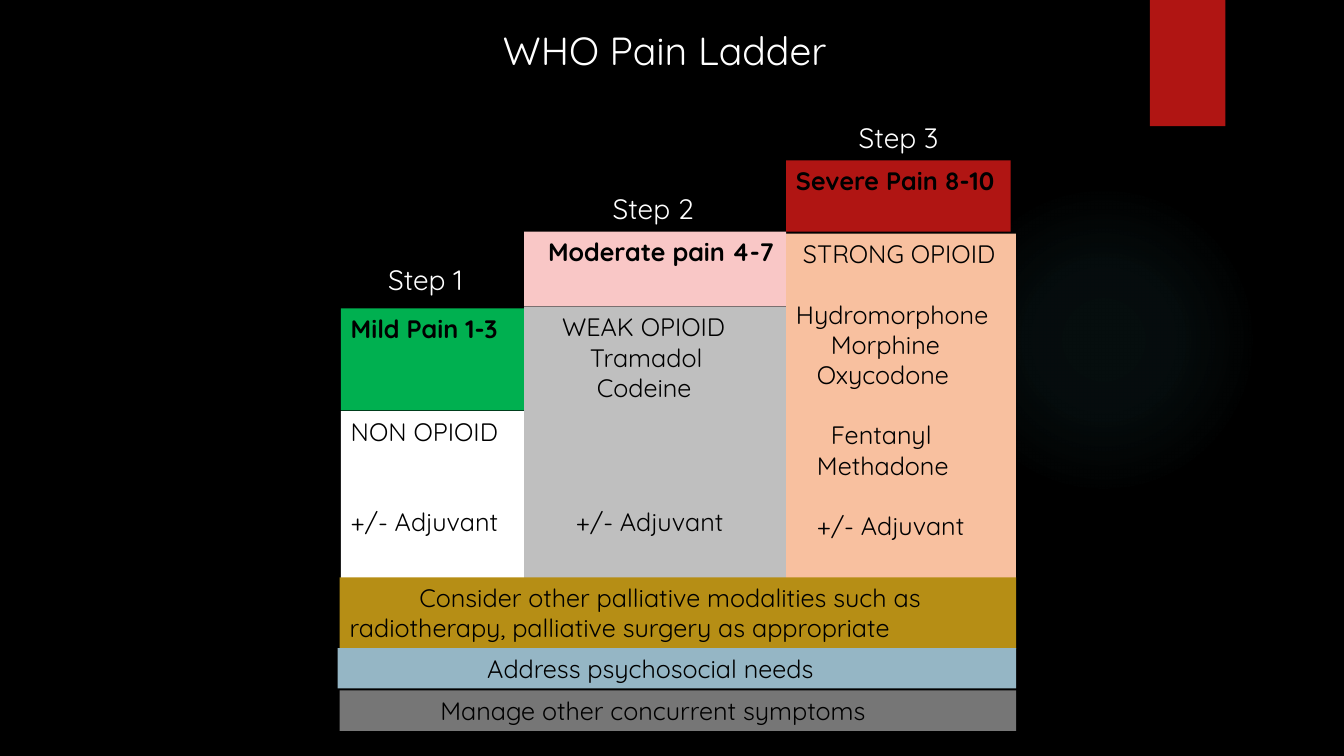
from dataclasses import dataclass

import lxml.etree
import pptx
import pptx.dml.color
import pptx.enum.shapes
import pptx.enum.text
import pptx.oxml.ns
import pptx.util

Cm = pptx.util.Cm
Pt = pptx.util.Pt
FONT = "Quicksand"
BLACK = "000000"
WHITE = "FFFFFF"
RED = "B01513"
INDENT_UNIT = 0.176


@dataclass(frozen=True)
class Line:
    text: str
    indent: int = 0
    space_before: float = 0


@dataclass(frozen=True)
class Panel:
    left: float
    top: float
    width: float
    height: float
    fill: str
    lines: tuple[Line, ...] = ()
    bold: bool = False


@dataclass(frozen=True)
class StepLabel:
    text: str
    left: float
    top: float


PANELS = (
    Panel(28.98, 0, 1.9, 3.18, RED),
    Panel(13.21, 5.84, 6.6, 1.88, "F9C7C6", (Line("Moderate pain 4-7", 2),), True),
    Panel(8.59, 7.77, 4.62, 2.57, "00B050", (Line("Mild Pain 1-3"),), True),
    Panel(19.81, 4.04, 5.66, 1.8, RED, (Line("Severe Pain 8-10"),), True),
    Panel(8.59, 10.36, 4.62, 6.4, WHITE, (
        Line("NON OPIOID"),
        Line("+/- Adjuvant", space_before=43),
    )),
    Panel(13.21, 7.73, 6.6, 8.28, "BFBFBF", (
        Line("WEAK OPIOID", 4),
        Line("Tramadol", 8),
        Line("Codeine", 9),
        Line("+/- Adjuvant", 6, 74),
    )),
    Panel(19.81, 5.89, 5.79, 9.5, "F8C09F", (
        Line("STRONG OPIOID", 1),
        Line("Hydromorphone", 0, 21.5),
        Line("Morphine", 5),
        Line("Oxycodone", 3),
        Line("Fentanyl", 5, 21.5),
        Line("Methadone", 3),
        Line("+/- Adjuvant", 3, 21.5),
    )),
    Panel(8.56, 14.55, 17.05, 1.8, "B68E15", (
        Line("Consider other palliative modalities such as "
             "radiotherapy, palliative surgery as appropriate", 10),
    )),
    Panel(8.51, 16.33, 17.1, 1.02, "95B6C5", (Line("Address psychosocial needs", 20),)),
    Panel(8.56, 17.4, 17.05, 1.02, "767676", (Line("Manage other concurrent symptoms", 13),)),
)

STEP_LABELS = (
    StepLabel("Step 1", 9.53, 6.5),
    StepLabel("Step 2", 15.19, 4.7),
    StepLabel("Step 3", 21.39, 2.92),
)


def rgb(value: str) -> pptx.dml.color.RGBColor:
    return pptx.dml.color.RGBColor.from_string(value)


def write_lines(shape, lines: tuple[Line, ...], size: float, color: str, bold: bool = False) -> None:
    frame = shape.text_frame
    frame.word_wrap = True
    frame.auto_size = pptx.enum.text.MSO_AUTO_SIZE.NONE
    frame.vertical_anchor = pptx.enum.text.MSO_ANCHOR.TOP
    for index, line in enumerate(lines):
        paragraph = frame.add_paragraph() if index else frame.paragraphs[0]
        paragraph.text = line.text
        paragraph.alignment = pptx.enum.text.PP_ALIGN.LEFT
        properties = paragraph._p.get_or_add_pPr()
        properties.set("marL", "0")
        properties.set("indent", str(int(Cm(line.indent * INDENT_UNIT))))
        if line.space_before:
            paragraph.space_before = Pt(line.space_before)
        paragraph.font.name = FONT
        paragraph.font.size = Pt(size)
        paragraph.font.bold = bold
        paragraph.font.color.rgb = rgb(color)


def add_glow(slide) -> None:
    glow = slide.shapes.add_shape(
        pptx.enum.shapes.MSO_SHAPE.OVAL, Cm(23.9), Cm(4.65), Cm(7.82), Cm(7.82))
    glow.shadow.inherit = False
    glow.line.fill.background()
    glow.fill.gradient()
    gradient = glow._element.spPr.find(pptx.oxml.ns.qn("a:gradFill"))
    for child in list(gradient):
        gradient.remove(child)

    def add(parent, tag: str, **attributes: str):
        return lxml.etree.SubElement(parent, pptx.oxml.ns.qn(tag), attributes)

    stops = add(gradient, "a:gsLst")
    for position, opacity in ((0, 7), (36, 6), (69, 0)):
        stop = add(stops, "a:gs", pos=str(position * 1000))
        color = add(stop, "a:srgbClr", val="50B9C1")
        add(color, "a:alpha", val=str(opacity * 1000))
    circle = add(gradient, "a:path", path="circle")
    add(circle, "a:fillToRect", l="50000", t="50000", r="50000", b="50000")


def add_panel(slide, panel: Panel) -> None:
    shape = slide.shapes.add_shape(
        pptx.enum.shapes.MSO_SHAPE.RECTANGLE,
        Cm(panel.left), Cm(panel.top), Cm(panel.width), Cm(panel.height))
    shape.shadow.inherit = False
    shape.fill.solid()
    shape.fill.fore_color.rgb = rgb(panel.fill)
    shape.line.fill.background()
    write_lines(shape, panel.lines, 18, BLACK, panel.bold)


def add_step_label(slide, label: StepLabel) -> None:
    box = slide.shapes.add_textbox(Cm(label.left), Cm(label.top), Cm(2.64), Cm(1.12))
    write_lines(box, (Line(label.text),), 20, WHITE)


def main() -> None:
    presentation = pptx.Presentation()
    presentation.slide_width = Cm(33.87)
    presentation.slide_height = Cm(19.05)
    slide = presentation.slides.add_slide(presentation.slide_layouts[5])
    slide.background.fill.solid()
    slide.background.fill.fore_color.rgb = rgb(BLACK)

    title = slide.shapes.title
    title.left, title.top, title.width, title.height = Cm(7.67), Cm(0.53), Cm(17.65), Cm(1.45)
    write_lines(title, (Line("WHO Pain Ladder", 27),), 28, WHITE)

    add_glow(slide)
    for panel in PANELS:
        add_panel(slide, panel)
    for label in STEP_LABELS:
        add_step_label(slide, label)
    presentation.save("out.pptx")


if __name__ == "__main__":
    main()
